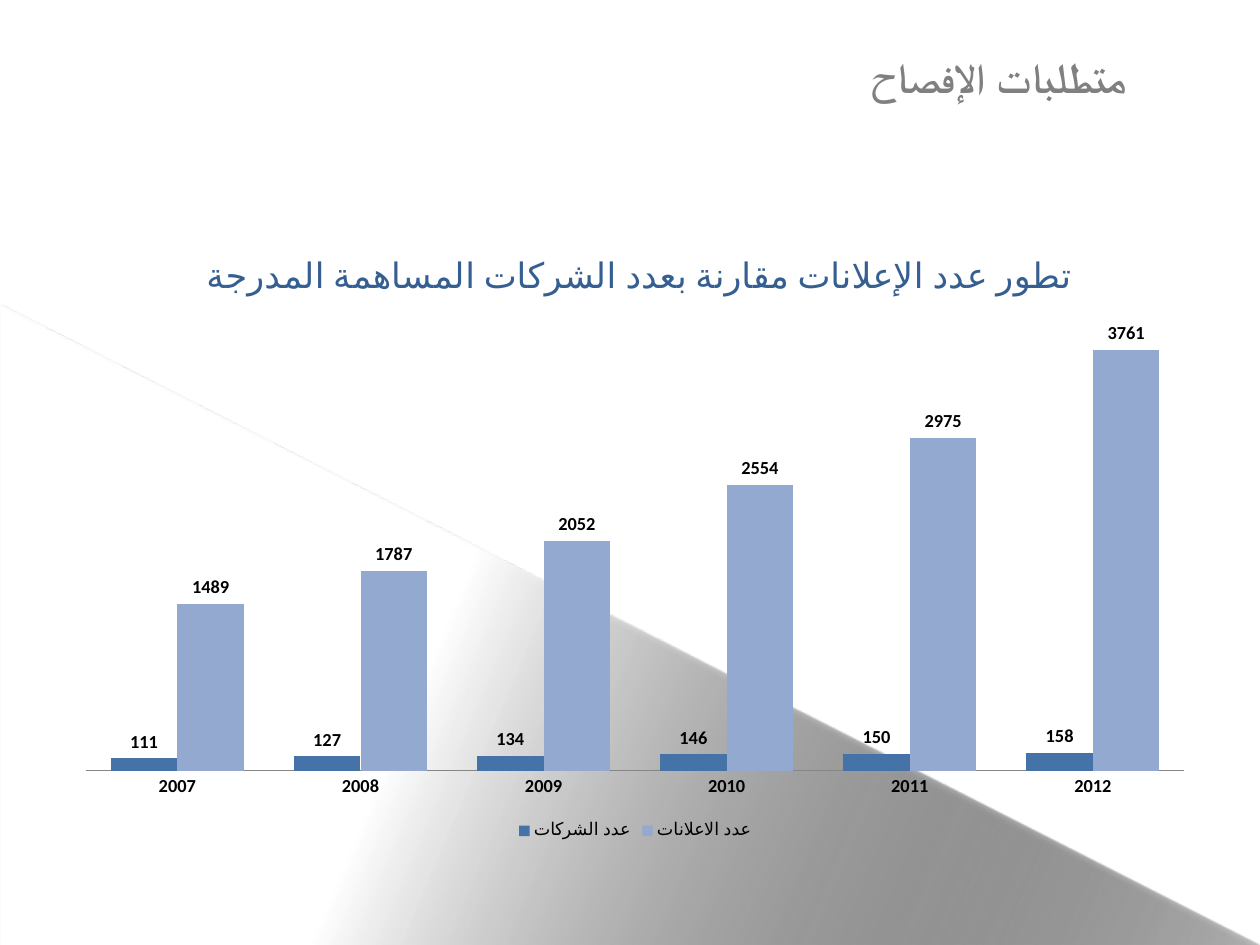
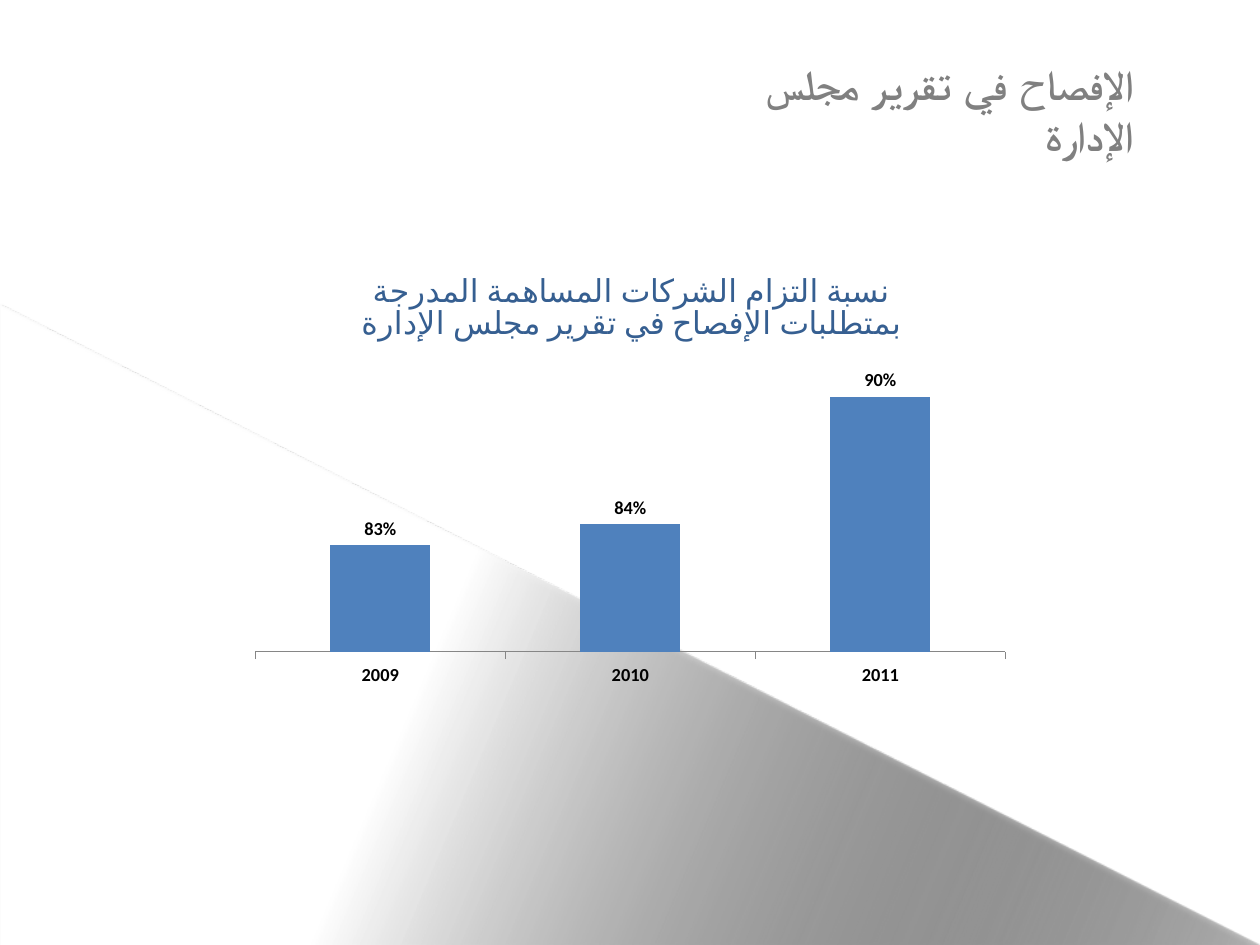
from dataclasses import dataclass

from lxml import etree
from pptx import Presentation
from pptx.chart.data import CategoryChartData
from pptx.dml.color import RGBColor
from pptx.enum.chart import XL_CHART_TYPE, XL_LABEL_POSITION, XL_LEGEND_POSITION, XL_TICK_MARK
from pptx.enum.shapes import MSO_SHAPE
from pptx.enum.text import MSO_ANCHOR, PP_ALIGN
from pptx.oxml.ns import qn
from pptx.util import Pt

COLUMNS = XL_CHART_TYPE.COLUMN_CLUSTERED
OUTSIDE_END = XL_LABEL_POSITION.OUTSIDE_END
BOTTOM = XL_LEGEND_POSITION.BOTTOM
TICK_NONE, TICK_OUT = XL_TICK_MARK.NONE, XL_TICK_MARK.OUTSIDE
TRIANGLE = MSO_SHAPE.RIGHT_TRIANGLE
TOP = MSO_ANCHOR.TOP
RIGHT = PP_ALIGN.RIGHT
WIDTH, HEIGHT = 720, 540


@dataclass(frozen=True)
class Theme:
    """Colours, font and type sizes shared by the slides."""
    font: str = "Calibri"
    white: RGBColor = RGBColor(0xFF, 0xFF, 0xFF)
    black: RGBColor = RGBColor(0, 0, 0)
    heading: RGBColor = RGBColor(0x80, 0x80, 0x80)
    caption: RGBColor = RGBColor(0x36, 0x5F, 0x91)
    axis: RGBColor = RGBColor(0x86, 0x86, 0x86)
    companies: RGBColor = RGBColor(0x45, 0x72, 0xA7)
    announcements: RGBColor = RGBColor(0x93, 0xA9, 0xCF)
    compliance: RGBColor = RGBColor(0x4F, 0x81, 0xBD)
    heading_size: float = 24
    label_size: float = 10.5
    legend_size: float = 10


THEME = Theme()


@dataclass(frozen=True)
class ChartStyle:
    """What sets one column chart apart from the other."""
    caption: tuple
    caption_size: float
    caption_at: tuple
    plot_box: tuple
    colours: tuple
    gap: int
    value_range: tuple
    number_format: str
    tick: XL_TICK_MARK
    legend: bool


def style_font(font, size, colour, bold=False):
    """Apply the theme font with a size, colour and weight."""
    font.name = THEME.font
    font.size = Pt(size)
    font.color.rgb = colour
    font.bold = bold


def add_arabic_run(paragraph, text, size, colour, bold=False):
    """Add one right-to-left run of text."""
    paragraph._p.get_or_add_pPr().set("rtl", "1")
    run = paragraph.add_run()
    run.text = text
    style_font(run.font, size, colour, bold)


def set_layout(parent, **fractions):
    """Place a chart part by fractions of the chart area."""
    layout = parent.find(qn("c:layout"))
    if layout is None:
        layout = etree.Element(qn("c:layout"))
        parent.insert(0, layout)
    manual = etree.SubElement(layout, qn("c:manualLayout"))
    settings = {"xMode": "edge", "yMode": "edge", **fractions}
    if "w" in fractions:
        settings = {"layoutTarget": "inner", **settings}
    for name, value in settings.items():
        etree.SubElement(manual, qn(f"c:{name}")).set("val", str(value))


def add_backdrop(slide, left, top, width, height):
    """Draw the shaded triangle that rises from the lower edge."""
    wedge = slide.shapes.add_shape(TRIANGLE, Pt(left), Pt(top), Pt(width), Pt(height))
    wedge.line.fill.background()
    wedge.fill.gradient()
    wedge.fill.gradient_angle = 337
    stops = wedge.fill.gradient_stops
    for stop, position, colour in zip(stops, (0.38, 1), (THEME.white, THEME.black)):
        stop.position = position
        stop.color.rgb = colour
    dark = wedge.element.xpath(".//a:gs/a:srgbClr")[-1]
    etree.SubElement(dark, qn("a:alpha")).set("val", "25000")
    wedge.shadow.inherit = False
    effects = wedge.element.spPr.find(qn("a:effectLst"))
    shadow = etree.SubElement(effects, qn("a:outerShdw"), blurRad=str(Pt(3.1)),
                              dist=str(Pt(1.8)), dir="5400000", rotWithShape="0")
    tint = etree.SubElement(shadow, qn("a:srgbClr"), val=str(THEME.black))
    etree.SubElement(tint, qn("a:alpha")).set("val", "35000")


def add_heading(slide, text, left, top, width, height):
    """Write the slide heading, aligned right."""
    frame = slide.shapes.add_textbox(Pt(left), Pt(top), Pt(width), Pt(height)).text_frame
    frame.word_wrap = True
    frame.vertical_anchor = TOP
    paragraph = frame.paragraphs[0]
    paragraph.alignment = RIGHT
    add_arabic_run(paragraph, text, THEME.heading_size, THEME.heading, True)


def add_caption(chart, style):
    """Write the chart title, one paragraph a line."""
    chart.has_title = True
    frame = chart.chart_title.text_frame
    for index, line in enumerate(style.caption):
        paragraph = frame.add_paragraph() if index else frame.paragraphs[0]
        add_arabic_run(paragraph, line, style.caption_size, THEME.caption)
    x, y = style.caption_at
    set_layout(chart.chart_title._element, x=x, y=y)


def style_axes(chart, style):
    """Show the years and hide the value scale."""
    years = chart.category_axis
    years.major_tick_mark = style.tick
    years.minor_tick_mark = TICK_NONE
    years.has_major_gridlines = False
    years.format.line.color.rgb = THEME.axis
    style_font(years.tick_labels.font, THEME.label_size, THEME.black, True)
    values = chart.value_axis
    values.visible = False
    values.has_major_gridlines = False
    values.minimum_scale, values.maximum_scale = style.value_range


def style_columns(plot, style):
    """Colour the columns and put bold values above them."""
    plot.gap_width = style.gap
    plot.vary_by_categories = False
    for series, colour in zip(plot.series, style.colours):
        series.format.fill.solid()
        series.format.fill.fore_color.rgb = colour
        labels = series.data_labels
        labels.show_value = True
        labels.position = OUTSIDE_END
        labels.number_format = style.number_format
        labels.number_format_is_linked = False
        style_font(labels.font, THEME.label_size, THEME.black, True)


def add_column_chart(slide, years, measures, style, left, top, width, height):
    """Build a captioned column chart in the given box."""
    data = CategoryChartData(number_format=style.number_format)
    data.categories = years
    for name, values in measures.items():
        data.add_series(name, values)
    chart = slide.shapes.add_chart(COLUMNS, Pt(left), Pt(top), Pt(width), Pt(height), data).chart
    style_font(chart.font, THEME.legend_size, THEME.black)
    add_caption(chart, style)
    style_axes(chart, style)
    style_columns(chart.plots[0], style)
    x, y, w, h = style.plot_box
    set_layout(chart._chartSpace.chart.plotArea, x=x, y=y, w=w, h=h)
    chart.has_legend = style.legend
    if style.legend:
        chart.legend.position = BOTTOM
        chart.legend.include_in_layout = False
        style_font(chart.legend.font, THEME.legend_size, THEME.black)


def add_slide(deck):
    """Start a blank slide with the shared backdrop."""
    slide = deck.slides.add_slide(deck.slide_layouts[6])
    add_backdrop(slide, 0, 174, WIDTH, HEIGHT - 174)
    return slide


def build_announcements(deck):
    """Compare announcements with listed companies by year."""
    slide = add_slide(deck)
    add_heading(slide, "متطلبات الإفصاح", 99, 26, 552, 90)
    style = ChartStyle(
        caption=("تطور عدد الإعلانات مقارنة بعدد الشركات المساهمة المدرجة",),
        caption_size=20, caption_at=(0.12, 0.03), plot_box=(0.02, 0.15, 0.96, 0.73),
        colours=(THEME.companies, THEME.announcements), gap=75,
        value_range=(0, 4000), number_format="General", tick=TICK_NONE, legend=True)
    measures = {
        "عدد الشركات": (111, 127, 134, 146, 150, 158),
        "عدد الاعلانات": (1489, 1787, 2052, 2554, 2975, 3761),
    }
    years = [str(year) for year in range(2007, 2013)]
    add_column_chart(slide, years, measures, style, 36, 132, 654, 350.5)


def build_compliance(deck):
    """Show the yearly rate of compliance in board reports."""
    slide = add_slide(deck)
    style = ChartStyle(
        caption=("نسبة التزام الشركات المساهمة المدرجة",
                 "بمتطلبات الإفصاح في تقرير مجلس الإدارة"),
        caption_size=18, caption_at=(0.15, 0.05), plot_box=(0.02, 0.33, 0.96, 0.57),
        colours=(THEME.compliance,), gap=150,
        value_range=(0.78, 0.9), number_format="0%", tick=TICK_OUT, legend=False)
    years = [str(year) for year in range(2009, 2012)]
    add_column_chart(slide, years, {"Series 1": (0.83, 0.84, 0.9)}, style,
                     137, 142.5, 446.5, 255.5)
    add_heading(slide, "الإفصاح في تقرير مجلس الإدارة", 404, 30, 251, 66)


def main():
    """Build and save the deck."""
    deck = Presentation()
    deck.slide_width, deck.slide_height = Pt(WIDTH), Pt(HEIGHT)
    build_announcements(deck)
    build_compliance(deck)
    deck.save("out.pptx")


if __name__ == "__main__":
    main()
